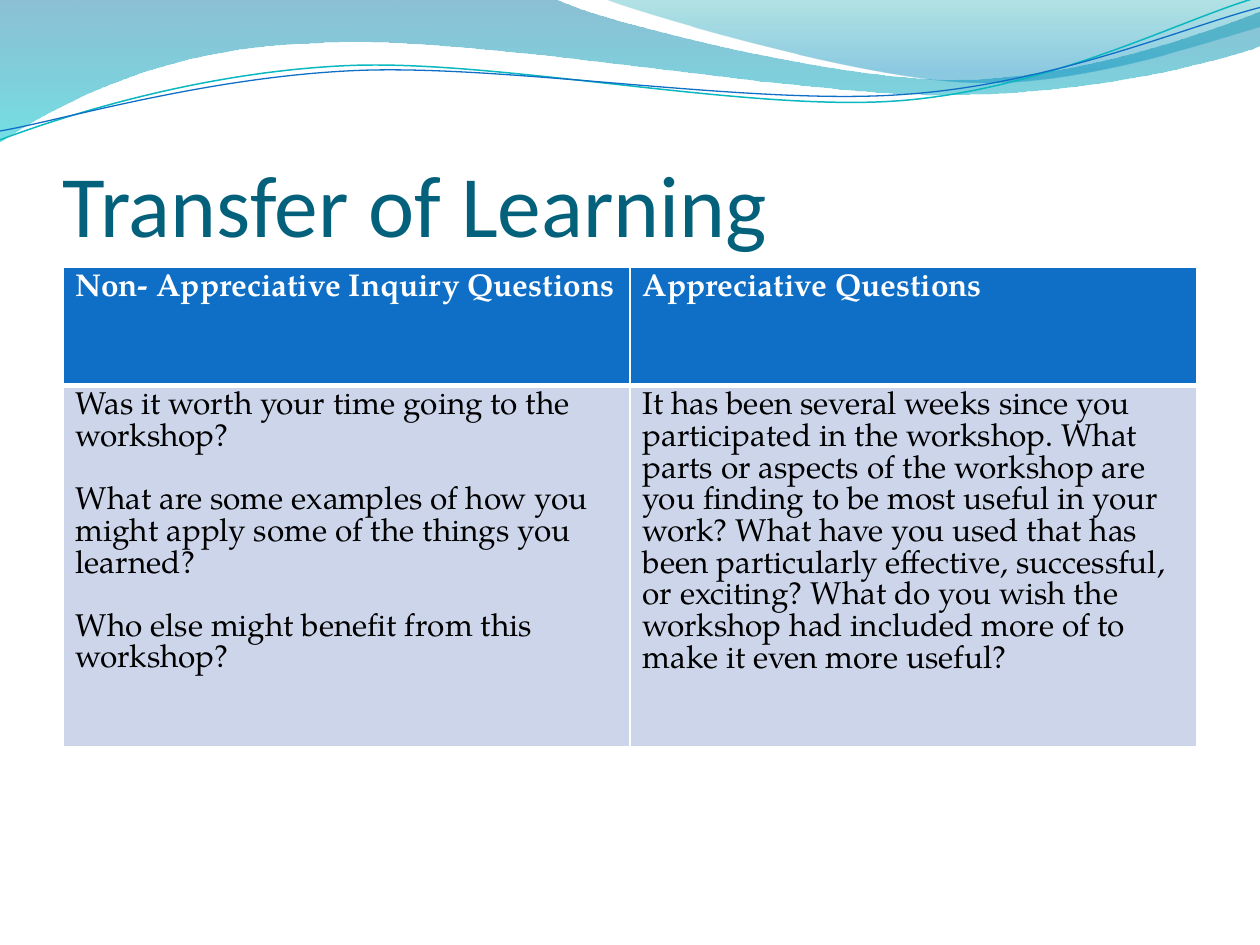
import math
from dataclasses import dataclass

from lxml import etree
from pptx import Presentation
from pptx import util as u
from pptx.dml.color import RGBColor
from pptx.enum import text
from pptx.oxml.ns import qn


@dataclass(frozen=True)
class Theme:
    """Colours, fonts and type sizes of the deck."""
    title: str = "04617B"
    header: str = "0F6FC6"
    body: str = "CCD5EA"
    white: str = "FFFFFF"
    black: str = "000000"
    teal: str = "0AB8BF"
    band: tuple = ((0, "0074A1", 45), (100, "00C6CF", 55))
    glow: tuple = ((0, "00A1A9", 30), (80, "008BBF", 45))
    title_font: str = "Calibri"
    body_font: str = "TeX Gyre Pagella"
    title_size: int = 50
    body_size: int = 18


def write(frame, paragraphs, *, font, size, color, bold=False, gap=0):
    """Fill a text frame with formatted paragraphs separated by a gap in points."""
    for index, words in enumerate(paragraphs):
        para = frame.add_paragraph() if index else frame.paragraphs[0]
        para.space_before = u.Pt(gap if index else 0)
        span = para.add_run()
        span.text = words
        span.font.name = font
        span.font.size = u.Pt(size)
        span.font.bold = bold
        span.font.color.rgb = RGBColor.from_string(color)


def turn(point, center, degrees):
    """Rotate a point clockwise about a center."""
    angle = math.radians(degrees)
    x, y = point[0] - center[0], point[1] - center[1]
    return (center[0] + x * math.cos(angle) - y * math.sin(angle),
            center[1] + x * math.sin(angle) + y * math.cos(angle))


class Painter:
    """Draws styled elements on the current slide."""

    def __init__(self, page, theme):
        self.page = page
        self.theme = theme

    def outline(self, start, pieces, close, center=(0, 0), tilt=0):
        """Build a freeform from straight (2 numbers) and cubic (6 numbers) pieces."""
        numbers = [*start, *(number for piece in pieces for number in piece)]
        points = [tuple(map(u.Inches, turn(point, center, -tilt)))
                  for point in zip(numbers[::2], numbers[1::2])]
        builder = self.page.shapes.build_freeform(*points[0], scale=1.0)
        builder.add_line_segments(points[1:], close=close)
        shape = builder.convert_to_shape()
        shape.shadow.inherit = False
        shape.rotation = tilt % 360
        segments = iter(list(shape.element.iter(qn("a:lnTo"))))
        for piece in pieces:
            first = next(segments)
            if len(piece) == 6:
                cubic = etree.Element(qn("a:cubicBezTo"))
                first.addprevious(cubic)
                for segment in (first, next(segments), next(segments)):
                    cubic.append(segment[0])
                    segment.getparent().remove(segment)
        return shape

    def wave(self, start, pieces, stops):
        """Draw a closed wave with a translucent top-to-bottom gradient."""
        shape = self.outline(start, pieces, True)
        shape.line.fill.background()
        shape.fill.gradient()
        shape.fill.gradient_angle = 270
        for stop, (position, color, _) in zip(shape.fill.gradient_stops, stops):
            stop.position = position / 100
            stop.color.rgb = RGBColor.from_string(color)
        for node, (_, _, opacity) in zip(shape.element.iter(qn("a:srgbClr")), stops):
            etree.SubElement(node, qn("a:alpha"), val=str(opacity * 1000))

    def curve(self, start, pieces, center, color, width):
        """Draw an open, slightly tilted curved line."""
        shape = self.outline(start, pieces, False, center, -2.7)
        shape.fill.background()
        shape.line.color.rgb = RGBColor.from_string(color)
        shape.line.width = u.Pt(width)

    def title(self, words, left, top, width, height):
        """Place the bottom-anchored slide title."""
        box = self.page.shapes.add_textbox(*map(u.Inches, (left, top, width, height)))
        frame = box.text_frame
        frame.word_wrap = True
        frame.vertical_anchor = text.MSO_ANCHOR.BOTTOM
        frame.margin_left = frame.margin_right = frame.margin_bottom = 0
        frame.margin_top = u.Inches(0.05)
        write(frame, [words], font=self.theme.title_font,
              size=self.theme.title_size, color=self.theme.title)

    def borders(self, cell, **widths):
        """Give a cell white borders, with widths in points by side."""
        properties = cell._tc.get_or_add_tcPr()
        for side, width in widths.items():
            line = etree.SubElement(properties, qn(f"a:ln{side}"), w=str(u.Pt(width)))
            fill = etree.SubElement(line, qn("a:solidFill"))
            etree.SubElement(fill, qn("a:srgbClr"), val=self.theme.white)

    def table(self, rows, left, top, width, heights):
        """Draw a table with a header row and equal columns."""
        size = map(u.Inches, (left, top, width, sum(heights)))
        grid = self.page.shapes.add_table(len(rows), len(rows[0]), *size).table
        grid.horz_banding = False
        for r, row in enumerate(rows):
            header = r == 0
            grid.rows[r].height = u.Inches(heights[r])
            for c, paragraphs in enumerate(row):
                cell = grid.cell(r, c)
                self.borders(cell, L=1, R=1, T=1 if header else 3, B=3 if header else 1)
                cell.fill.solid()
                cell.fill.fore_color.rgb = RGBColor.from_string(
                    self.theme.header if header else self.theme.body)
                write(cell.text_frame, paragraphs, font=self.theme.body_font,
                      size=self.theme.body_size, bold=header, gap=self.theme.body_size,
                      color=self.theme.white if header else self.theme.black)


def main():
    """Build the slide and save it."""
    deck = Presentation()
    deck.slide_width, deck.slide_height = u.Inches(10), u.Inches(7.5)
    theme = Theme()
    painter = Painter(deck.slides.add_slide(deck.slide_layouts[6]), theme)

    painter.wave((0, 0), [
        (4.4, -0.01), (4.76, 0.17, 6.64, 0.63, 7.58, 0.63),
        (8.53, 0.63, 9.58, 0.26, 10, 0.09), (10.01, 0.36),
        (9.83, 0.44, 8.7, 0.76, 7.46, 0.75), (6.22, 0.75, 3.82, 0.28, 2.57, 0.34),
        (1.29, 0.36, 0.46, 0.83, -0.01, 1.13), (0, 0)], theme.band)
    painter.wave((4.79, -0.01), [
        (5.09, 0.11, 6.82, 0.62, 7.69, 0.65),
        (8.56, 0.69, 9.61, 0.32, 10, 0.21), (10, 0), (4.79, -0.01)], theme.glow)
    painter.curve((0, 1.11), [
        (0.48, 0.93, 1.58, 0.57, 2.77, 0.52), (3.95, 0.47, 5.93, 0.89, 7.13, 0.8),
        (8.33, 0.71, 9.38, 0.15, 9.98, -0.02)], (4.99, 0.57), theme.teal, 0.85)
    painter.curve((0, 1.04), [
        (0.47, 0.96, 1.64, 0.61, 2.83, 0.56), (4.03, 0.51, 5.97, 0.84, 7.17, 0.75),
        (8.36, 0.67, 9.41, 0.21, 10, 0.06)], (5, 0.59), theme.header, 0.75)

    painter.title("Transfer of Learning", 0.5, 0.77, 9, 1.25)
    painter.table([
        [["Non- Appreciative Inquiry Questions"], ["Appreciative Questions"]],
        [["Was it worth your time going to the workshop?",
          "What are some examples of how you might apply some of the things you learned?",
          "Who else might benefit from this workshop?"],
         ["It has been several weeks since you participated in the workshop. What parts or "
          "aspects of the workshop are you finding to be most useful in your work? What have "
          "you used that has been particularly effective, successful, or exciting? What do "
          "you wish the workshop had included more of to make it even more useful?"]],
    ], 0.5, 2.12, 9, (0.94, 2.87))
    deck.save("out.pptx")


if __name__ == "__main__":
    main()
